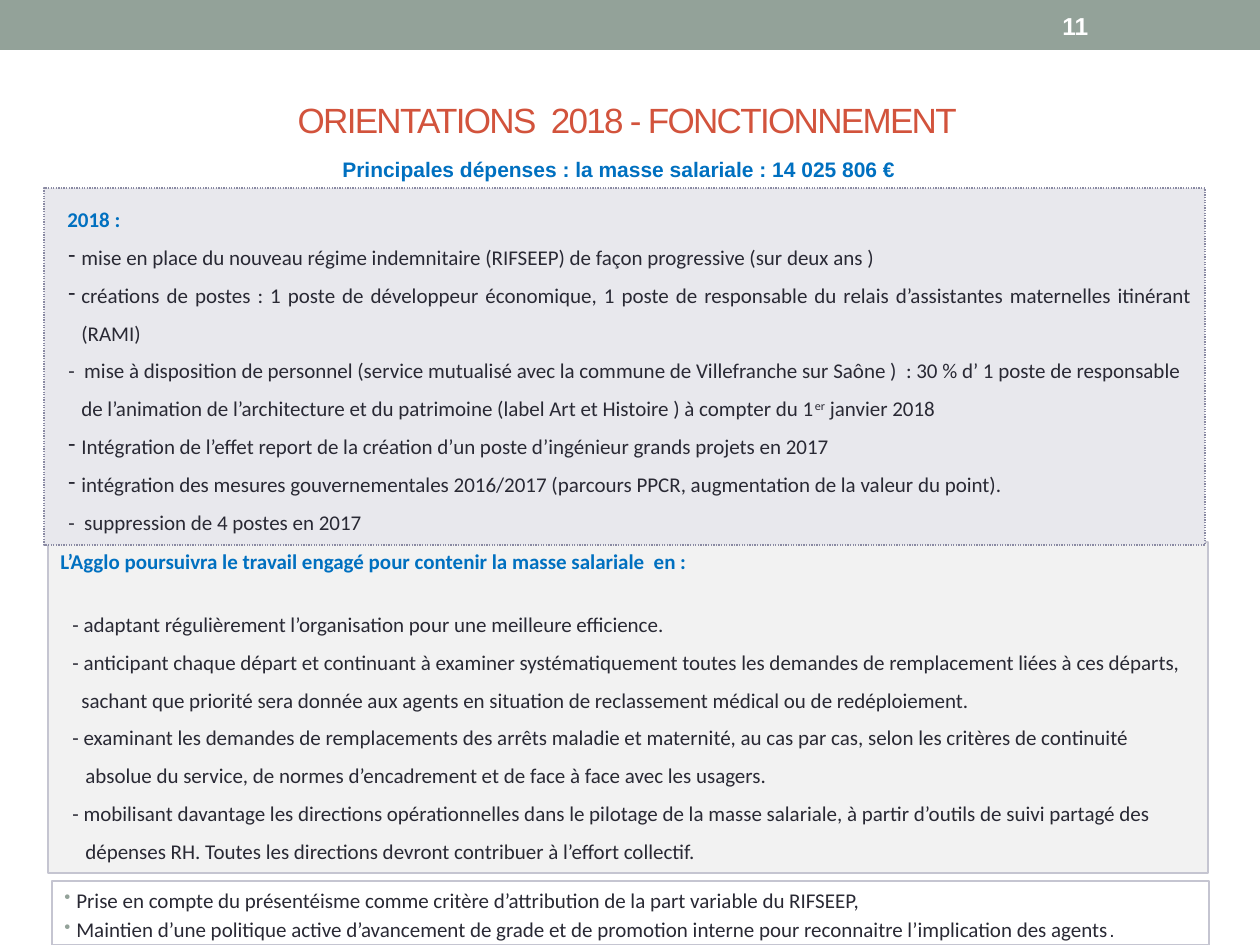
from lxml import etree
from pptx import Presentation
from pptx.dml.color import RGBColor
from pptx.enum.dml import MSO_LINE
from pptx.enum.shapes import MSO_SHAPE
from pptx.enum.text import MSO_ANCHOR as ANCHOR, PP_ALIGN as ALIGN
from pptx.oxml.ns import qn
from pptx.util import Emu, Pt

EMU_PER_PX = 914400 / 126

SAGE = RGBColor(0x93, 0xA2, 0x99)
RED = RGBColor(0xD2, 0x53, 0x3C)
BLUE = RGBColor(0x00, 0x70, 0xC0)
DARK = RGBColor(0x29, 0x29, 0x34)
WHITE = RGBColor(0xFF, 0xFF, 0xFF)
LAVENDER = RGBColor(0xE8, 0xE8, 0xED)
LIGHT_GREY = RGBColor(0xF2, 0xF2, 0xF2)
PALE_BORDER = RGBColor(0xC5, 0xC5, 0xD1)
DOTTED_BORDER = RGBColor(0x8A, 0x8A, 0xA3)

BODY_FONT = {"name": "Calibri", "size": Pt(12)}
HEADING_FONT = {**BODY_FONT, "bold": True}

# Paragraph layouts: margin and indent in px, then paragraph format values
HEADING_2018 = {"margin": 11, "line_spacing": 1.5}
PLAIN_ITEM = {"margin": 25, "indent": -13, "line_spacing": 1.5}
DASH_ITEM = {**PLAIN_ITEM, "bullet": "-"}
WIDE_ITEM = {"margin": 37, "indent": -25, "line_spacing": 1.5}
DOT_ITEM = {"margin": 12, "indent": -12, "space_before": Pt(2.4),
            "bullet": "•", "bullet_color": SAGE, "bullet_size": 85}

# Each paragraph: layout, runs
MEASURES_2018 = [
    (DASH_ITEM, ["mise en place du nouveau régime indemnitaire (RIFSEEP) de façon "
                 "progressive (sur deux ans )"]),
    ({**DASH_ITEM, "alignment": ALIGN.JUSTIFY},
     ["créations de postes : 1 poste de développeur économique, 1 poste de responsable "
      "du relais d’assistantes maternelles itinérant (RAMI)"]),
    (PLAIN_ITEM, ["-  mise à disposition de personnel (service mutualisé avec la commune de "
                  "Villefranche sur Saône )  : 30 % d’ 1 poste de responsable de l’animation "
                  "de l’architecture et du patrimoine (label Art et Histoire ) à compter du 1",
                  ("er", {"baseline": "30000"}), " janvier 2018"]),
    (DASH_ITEM, ["Intégration de l’effet report de la création d’un poste d’ingénieur "
                 "grands projets en 2017"]),
    (DASH_ITEM, ["intégration des mesures gouvernementales 2016/2017 (parcours PPCR, "
                 "augmentation de la valeur du point)."]),
    (PLAIN_ITEM, ["-  suppression de 4 postes en 2017"]),
]
PAYROLL_ACTIONS = [
    ({**WIDE_ITEM, "space_before": Pt(14.6)},
     ["- adaptant régulièrement l’organisation pour une meilleure efficience."]),
    ({**WIDE_ITEM, "alignment": ALIGN.JUSTIFY},
     ["- anticipant chaque départ et continuant à examiner systématiquement toutes les "
      "demandes de remplacement liées à ces départs,"]),
    ({"margin": 21, "line_spacing": 1.5},
     ["sachant que priorité sera donnée aux agents en situation de reclassement médical "
      "ou de redéploiement."]),
    (PLAIN_ITEM, ["- examinant les demandes de remplacements des arrêts maladie et maternité, "
                  "au cas par cas, selon les critères de continuité absolue du service, de "
                  "normes d’encadrement et de face à face avec les usagers."]),
    (PLAIN_ITEM, ["- mobilisant davantage les directions opérationnelles dans le pilotage de "
                  "la masse salariale, à partir d’outils de suivi partagé des dépenses RH. "
                  "Toutes les directions devront contribuer à l’effort collectif."]),
]
HR_POLICY = [
    (DOT_ITEM, ["Prise en compte du présentéisme comme critère d’attribution de la part "
                "variable du RIFSEEP,"]),
    (DOT_ITEM, ["Maintien d’une politique active d’avancement de grade et de promotion "
                "interne pour reconnaitre l’implication des agents",
                (".", {"name": "Arial", "size": Pt(11)})]),
]


def px(value):
    return Emu(round(value * EMU_PER_PX))


def add_bullet(properties, char, color=None, size=None):
    if color is not None:
        holder = etree.SubElement(properties, qn("a:buClr"))
        etree.SubElement(holder, qn("a:srgbClr")).set("val", str(color))
    if size is not None:
        etree.SubElement(properties, qn("a:buSzPct")).set("val", str(size * 1000))
    etree.SubElement(properties, qn("a:buChar")).set("char", char)


def format_paragraph(paragraph, layout):
    for name in ("alignment", "line_spacing", "space_before"):
        if name in layout:
            setattr(paragraph, name, layout[name])
    properties = paragraph._p.get_or_add_pPr()
    properties.set("marL", str(px(layout.get("margin", 0))))
    properties.set("indent", str(px(layout.get("indent", 0))))
    if "bullet" in layout:
        add_bullet(properties, layout["bullet"],
                   layout.get("bullet_color"), layout.get("bullet_size"))


def add_run(paragraph, text, color, values):
    run = paragraph.add_run()
    run.text = text
    run.font.color.rgb = color
    for name, value in values.items():
        if name in ("baseline", "spc"):
            run.font._element.set(name, value)
        else:
            setattr(run.font, name, value)


def write_paragraph(frame, runs, color, font, layout):
    first = frame.paragraphs[0]
    paragraph = frame.add_paragraph() if first.runs else first
    format_paragraph(paragraph, layout)
    for run in runs:
        text, extra = (run, {}) if isinstance(run, str) else run
        add_run(paragraph, text, color, {**font, **extra})


def add_label(slide, box, text, color, font, alignment, anchor):
    frame = slide.shapes.add_textbox(*map(px, box)).text_frame
    frame.word_wrap = True
    frame.vertical_anchor = anchor
    write_paragraph(frame, [text], color, font, {"alignment": alignment})


def add_rectangle(slide, box, fill=None, border=None, dash=None):
    shape = slide.shapes.add_shape(MSO_SHAPE.RECTANGLE, *map(px, box))
    shape.shadow.inherit = False
    if fill is None:
        shape.fill.background()
    else:
        shape.fill.solid()
        shape.fill.fore_color.rgb = fill
    if border is None:
        shape.line.fill.background()
    else:
        shape.line.color.rgb = border
        shape.line.width = Pt(0.75)
        if dash is not None:
            shape.line.dash_style = dash
    return shape


def add_panel(slide, box, items, heading=None, heading_layout=None, **style):
    frame = add_rectangle(slide, box, **style).text_frame
    frame.word_wrap = True
    frame.vertical_anchor = ANCHOR.TOP
    left = {"alignment": ALIGN.LEFT}
    if heading:
        write_paragraph(frame, [heading], BLUE, HEADING_FONT,
                        {**left, **(heading_layout or {})})
    for layout, runs in items:
        write_paragraph(frame, runs, DARK, BODY_FONT, {**left, **layout})


def main():
    presentation = Presentation()
    presentation.slide_width, presentation.slide_height = px(1260), px(945)
    slide = presentation.slides.add_slide(presentation.slide_layouts[6])

    # Top band, title and page number
    add_rectangle(slide, (0, 0, 1260, 50), fill=SAGE)
    add_label(slide, (60, 52, 1134, 136), "ORIENTATIONS  2018 - FONCTIONNEMENT", RED,
              {"name": "Arial", "size": Pt(20), "spc": "-100"}, ALIGN.CENTER, ANCHOR.MIDDLE)
    add_label(slide, (1050, 3, 147, 45), "11", WHITE,
              {"name": "Arial", "size": Pt(14), "bold": True}, ALIGN.LEFT, ANCHOR.MIDDLE)
    add_label(slide, (44, 150, 1150, 38),
              "Principales dépenses : la masse salariale : 14 025 806 €", BLUE,
              {"name": "Arial", "size": Pt(12), "bold": True}, ALIGN.CENTER, ANCHOR.TOP)

    # Text panels, from back to front
    add_panel(slide, (52, 881, 1157, 64), HR_POLICY, border=PALE_BORDER)
    add_panel(slide, (48, 542, 1160, 331), PAYROLL_ACTIONS,
              "L’Agglo poursuivra le travail engagé pour contenir la masse salariale  en :",
              fill=LIGHT_GREY, border=PALE_BORDER)
    add_panel(slide, (44, 188, 1161, 357), MEASURES_2018, "2018 :", HEADING_2018,
              fill=LAVENDER, border=DOTTED_BORDER, dash=MSO_LINE.ROUND_DOT)

    presentation.save("out.pptx")


if __name__ == "__main__":
    main()
